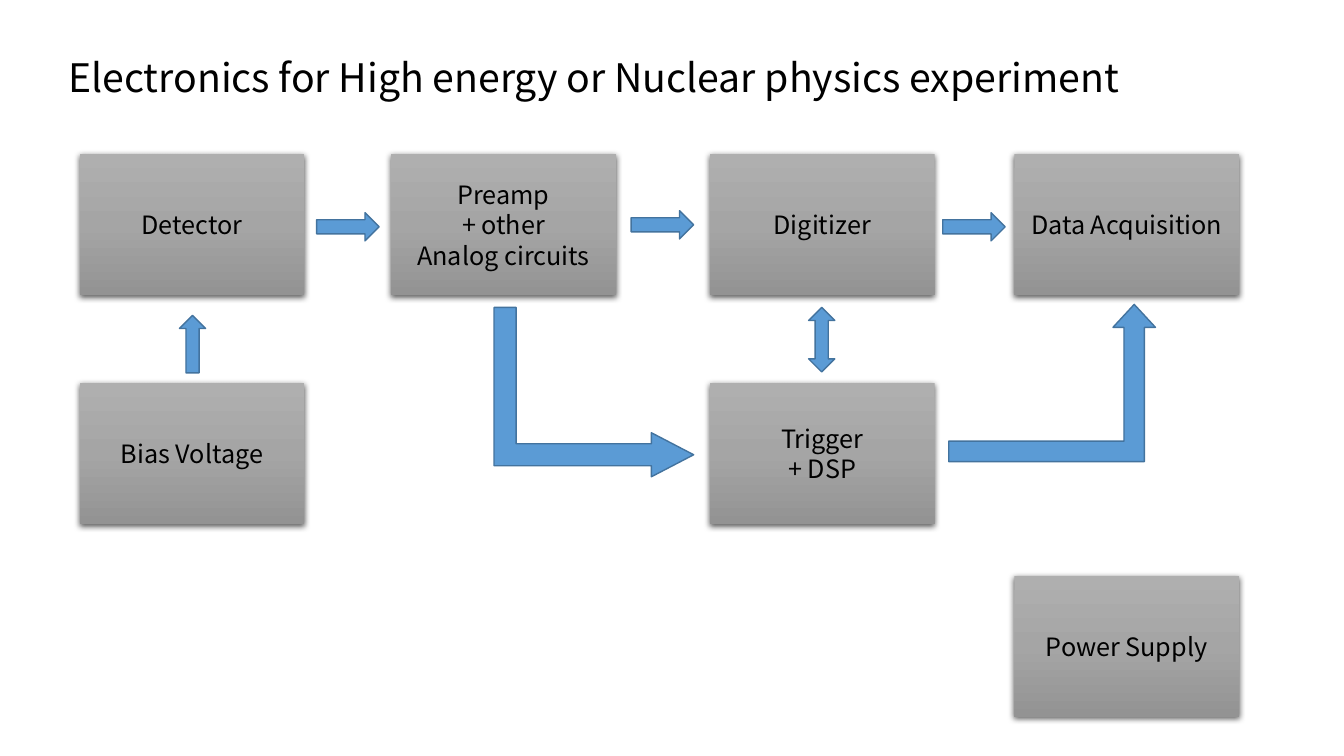
from pptx import Presentation
from pptx.dml.color import RGBColor
from pptx.enum.shapes import MSO_SHAPE
from pptx.enum.text import MSO_ANCHOR, PP_ALIGN
from pptx.oxml import parse_xml
from pptx.oxml.ns import nsdecls
from pptx.util import Inches, Pt

FONT = "Noto Sans CJK KR"
BLACK = RGBColor(0x00, 0x00, 0x00)
BLUE = RGBColor(0x5B, 0x9B, 0xD5)
DARK_BLUE = RGBColor(0x43, 0x73, 0x9E)
GREYS = [(0, RGBColor(0xAF, 0xAF, 0xAF)),
         (50, RGBColor(0xA5, 0xA5, 0xA5)),
         (100, RGBColor(0x93, 0x93, 0x93))]

# Block grid
COLS = [0.79, 3.88, 7.04, 10.06]
ROWS = [1.53, 3.8, 5.71]
BLOCK_W, BLOCK_H = 2.23, 1.4

# Column, row, lines of text
BLOCKS = [
    (0, 0, ["Detector"]),
    (1, 0, ["Preamp", "+ other", "Analog circuits"]),
    (2, 0, ["Digitizer"]),
    (3, 0, ["Data Acquisition"]),
    (0, 1, ["Bias Voltage"]),
    (2, 1, ["Trigger", "+ DSP"]),
    (3, 2, ["Power Supply"]),
]


def add_run(p, text, size):
    r = p.add_run()
    r.text = text
    r.font.name = FONT
    r.font.size = Pt(size)
    r.font.color.rgb = BLACK


def add_title(s, text):
    title = s.shapes.title
    title.left, title.top = Inches(0.58), Inches(0.48)
    title.width, title.height = Inches(11.46), Inches(0.57)
    tf = title.text_frame
    tf.word_wrap = True
    tf.vertical_anchor = MSO_ANCHOR.MIDDLE
    p = tf.paragraphs[0]
    p.alignment = PP_ALIGN.LEFT
    add_run(p, text, 28)


def style_block(sp):
    """Grey vertical gradient, no outline, soft shadow below."""
    stops = "".join(
        f'<a:gs pos="{pos * 1000}"><a:srgbClr val="{grey}"/></a:gs>'
        for pos, grey in GREYS)
    spPr = sp._element.spPr
    spPr.append(parse_xml(
        f'<a:gradFill {nsdecls("a")} rotWithShape="1"><a:gsLst>{stops}</a:gsLst>'
        '<a:lin ang="5400000" scaled="0"/></a:gradFill>'))
    sp.line.fill.background()
    spPr.append(parse_xml(
        f'<a:effectLst {nsdecls("a")}><a:outerShdw blurRad="{Pt(4.5)}" '
        f'dist="{Pt(1.5)}" dir="5400000" algn="ctr" rotWithShape="0">'
        f'<a:srgbClr val="{BLACK}"><a:alpha val="63000"/></a:srgbClr>'
        '</a:outerShdw></a:effectLst>'))


def add_block(s, col, row, lines):
    sp = s.shapes.add_shape(
        MSO_SHAPE.RECTANGLE, Inches(COLS[col]), Inches(ROWS[row]),
        Inches(BLOCK_W), Inches(BLOCK_H))
    style_block(sp)
    tf = sp.text_frame
    tf.word_wrap = True
    tf.vertical_anchor = MSO_ANCHOR.MIDDLE
    for i, line in enumerate(lines):
        p = tf.add_paragraph() if i else tf.paragraphs[0]
        p.alignment = PP_ALIGN.CENTER
        add_run(p, line, 18)


def add_arrow(s, kind, left, top, width, height, adjustments=(), rotation=0):
    sp = s.shapes.add_shape(
        kind, Inches(left), Inches(top), Inches(width), Inches(height))
    sp.shadow.inherit = False
    sp.fill.solid()
    sp.fill.fore_color.rgb = BLUE
    sp.line.color.rgb = DARK_BLUE
    sp.line.width = Pt(1)
    sp.rotation = rotation
    for i, value in enumerate(adjustments):
        sp.adjustments[i] = value


def main():
    prs = Presentation()
    prs.slide_width, prs.slide_height = Inches(13.33), Inches(7.5)
    s = prs.slides.add_slide(prs.slide_layouts[5])
    add_title(s, "Electronics for High energy or Nuclear physics experiment")

    for col, row, lines in BLOCKS:
        add_block(s, col, row, lines)

    # Signal chain along the top row
    for left, top in [(3.14, 2.11), (6.26, 2.09), (9.35, 2.11)]:
        add_arrow(s, MSO_SHAPE.RIGHT_ARROW, left, top, 0.62, 0.28)

    # Links between the rows
    add_arrow(s, MSO_SHAPE.UP_ARROW, 1.78, 3.13, 0.26, 0.57)
    add_arrow(s, MSO_SHAPE.UP_DOWN_ARROW, 8.02, 3.05, 0.26, 0.64)

    # Trigger path: preamp to trigger, trigger to acquisition
    add_arrow(s, MSO_SHAPE.BENT_UP_ARROW, 5.05, 2.9, 1.68, 1.98,
              (0.13, 0.13, 0.25), rotation=90)
    add_arrow(s, MSO_SHAPE.BENT_UP_ARROW, 9.41, 3.02, 2.05, 1.56,
              (0.13, 0.135, 0.146))

    prs.save("out.pptx")


if __name__ == "__main__":
    main()
